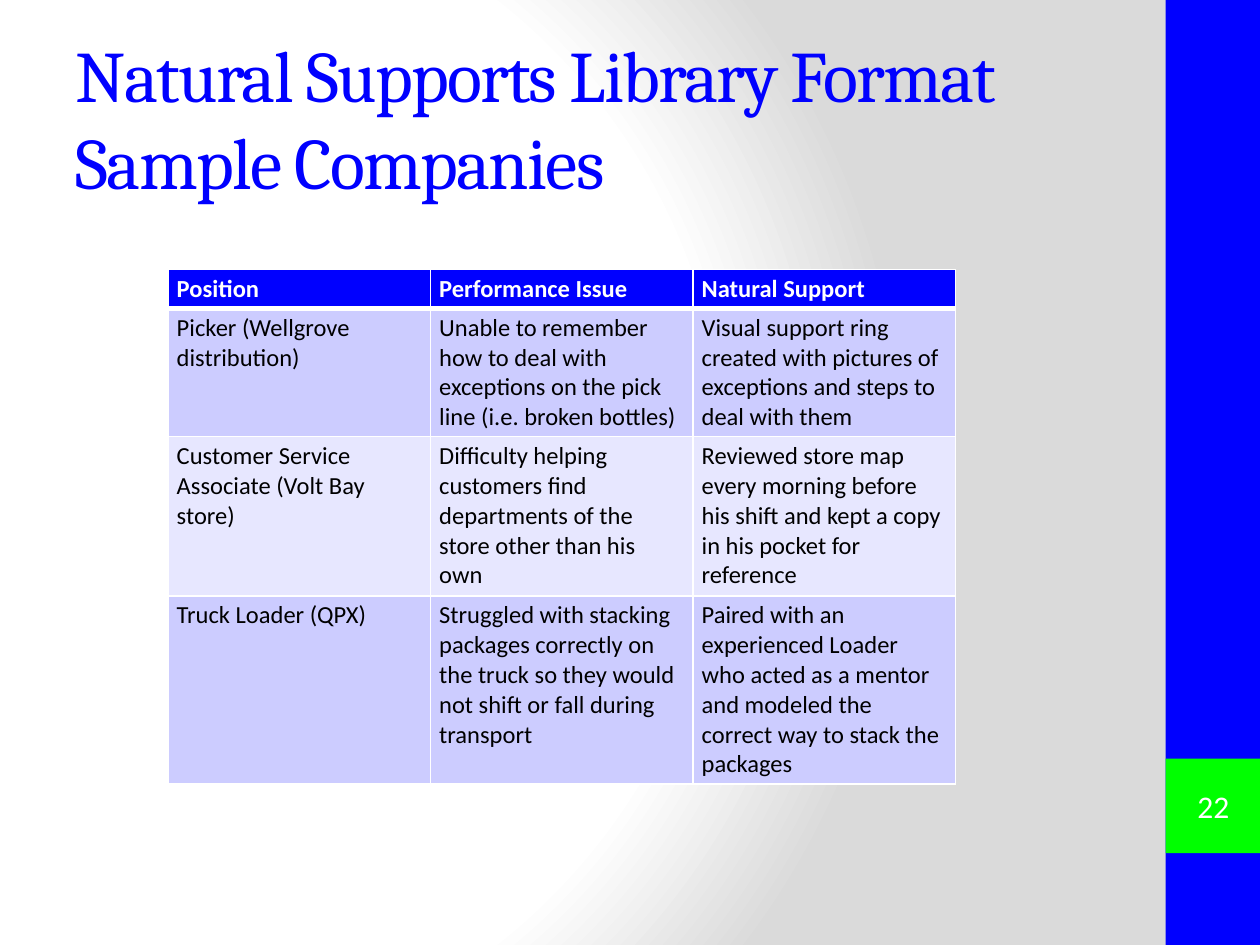
"""Build the natural supports library slide with its sample table."""
from lxml.etree import SubElement
from pptx import Presentation
from pptx.dml.color import RGBColor
from pptx.enum.shapes import MSO_SHAPE
from pptx.enum.text import MSO_ANCHOR, PP_ALIGN
from pptx.oxml import parse_xml
from pptx.oxml.ns import qn
from pptx.util import Pt

COLORS = {
    "blue": "0000FF", "green": "00FF00", "white": "FFFFFF", "gray": "DADADA",
    "black": "000000", "band": "CCCCFF", "light_band": "E7E7FF",
}
ROWS = [
    ("Position", "Performance Issue", "Natural Support"),
    ("Picker (Wellgrove distribution)",
     "Unable to remember how to deal with exceptions on the pick line (i.e. broken bottles)",
     "Visual support ring created with pictures of exceptions and steps to deal with them"),
    ("Customer Service Associate (Volt Bay store)",
     "Difficulty helping customers find departments of the store other than his own",
     "Reviewed store map every morning before his shift and kept a copy in his pocket for reference"),
    ("Truck Loader (QPX)",
     "Struggled with stacking packages correctly on the truck so they would not shift or fall during transport",
     "Paired with an experienced Loader who acted as a mentor and modeled the correct way to stack the packages"),
]
ROW_HEIGHTS = (22, 73, 91, 107)
NAMESPACE = "http://schemas.openxmlformats.org/drawingml/2006/main"


def color(name):
    return RGBColor.from_string(COLORS[name])


def write(frame, text, *, size, tint, font="Calibri", bold=False, align=PP_ALIGN.LEFT,
          anchor=MSO_ANCHOR.TOP, margins=(7.2, 3.6), spacing=0):
    frame.word_wrap = True
    frame.vertical_anchor = anchor
    frame.margin_left = frame.margin_right = Pt(margins[0])
    frame.margin_top = frame.margin_bottom = Pt(margins[1])
    para = frame.paragraphs[0]
    para.alignment = align
    for index, line in enumerate(text.split("\n")):
        if index:
            para.add_line_break()
        span = para.add_run()
        span.text = line
        span.font.name = font
        span.font.size = Pt(size)
        span.font.bold = bold
        span.font.color.rgb = color(tint)
        if spacing:
            span.font._element.set("spc", str(spacing * 100))


def paint_background(page):
    page.background.fill.solid()
    solid = page.element.find(".//" + qn("p:bgPr")).find(qn("a:solidFill"))
    stops = "".join(
        f'<a:gs pos="{position * 1000}"><a:srgbClr val="{COLORS[name]}"/></a:gs>'
        for position, name in ((0, "white"), (75, "white"), (100, "gray")))
    gradient = parse_xml(
        f'<a:gradFill xmlns:a="{NAMESPACE}" rotWithShape="1"><a:gsLst>{stops}</a:gsLst>'
        '<a:path path="circle"><a:fillToRect l="20000" t="50000" r="100000" b="50000"/>'
        '</a:path></a:gradFill>')
    solid.getparent().replace(solid, gradient)


def add_block(page, left, top, width, height, fill=None, kind=MSO_SHAPE.RECTANGLE):
    block = page.shapes.add_shape(kind, Pt(left), Pt(top), Pt(width), Pt(height))
    block.shadow.inherit = False
    block.line.fill.background()
    if fill:
        block.fill.solid()
        block.fill.fore_color.rgb = color(fill)
    else:
        block.fill.background()
    return block


def add_title(page, text):
    title = page.shapes.title
    title.left, title.top, title.width, title.height = Pt(36), Pt(21.6), Pt(600), Pt(90)
    write(title.text_frame, text, size=41.4, tint="blue", font="Cambria",
          anchor=MSO_ANCHOR.MIDDLE, spacing=-1)


def set_borders(cell, top, bottom):
    properties = cell._tc.get_or_add_tcPr()
    for side, width in (("L", 1), ("R", 1), ("T", top), ("B", bottom)):
        line = SubElement(properties, qn(f"a:ln{side}"), w=str(Pt(width)))
        fill = SubElement(line, qn("a:solidFill"))
        SubElement(fill, qn("a:srgbClr"), val=COLORS["white"])


def add_support_table(page, rows):
    table = page.shapes.add_table(len(rows), len(rows[0]), Pt(96), Pt(154),
                                  Pt(450), Pt(sum(ROW_HEIGHTS))).table
    for row_index, texts in enumerate(rows):
        table.rows[row_index].height = Pt(ROW_HEIGHTS[row_index])
        header = row_index == 0
        fill = "blue" if header else ("light_band", "band")[row_index % 2]
        for column_index, text in enumerate(texts):
            cell = table.cell(row_index, column_index)
            write(cell.text_frame, text, size=14, bold=header,
                  tint="white" if header else "black")
            cell.margin_left = cell.margin_right = Pt(5)
            cell.margin_top = cell.margin_bottom = Pt(2.6)
            cell.vertical_anchor = MSO_ANCHOR.TOP
            set_borders(cell, 3 if row_index == 1 else 1, 3 if header else 1)
            cell.fill.solid()
            cell.fill.fore_color.rgb = color(fill)


def add_page_number(page, number):
    box = add_block(page, 671.76, 445, 43.2, 31, kind=MSO_SHAPE.DOUBLE_BRACKET)
    write(box.text_frame, number, size=18, tint="white", align=PP_ALIGN.CENTER,
          anchor=MSO_ANCHOR.MIDDLE, margins=(0, 0))


def main():
    deck = Presentation()
    deck.slide_width, deck.slide_height = Pt(720), Pt(540)
    page = deck.slides.add_slide(deck.slide_layouts[5])
    paint_background(page)
    add_block(page, 666, 0, 54, 540, "blue")
    add_block(page, 666, 433.5, 54, 54, "green")
    add_title(page, "Natural Supports Library Format\nSample Companies")
    add_support_table(page, ROWS)
    add_page_number(page, "22")
    deck.save("out.pptx")


if __name__ == "__main__":
    main()
